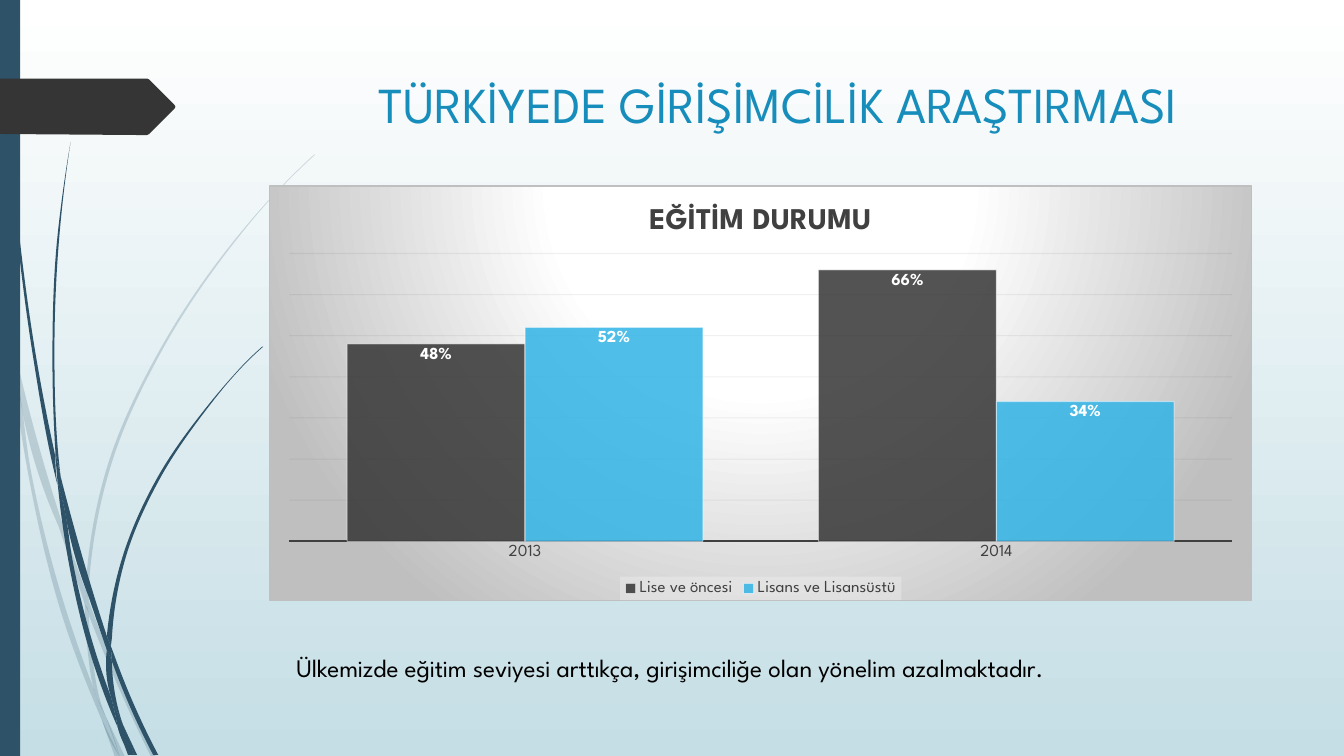
from lxml.etree import SubElement
from pptx import Presentation
from pptx.chart.data import CategoryChartData
from pptx.dml.color import RGBColor as RGB
from pptx.enum.chart import XL_CHART_TYPE as ChartType, XL_LABEL_POSITION as LabelPos
from pptx.enum.chart import XL_LEGEND_POSITION as LegendPos, XL_TICK_MARK as Tick
from pptx.enum.lang import MSO_LANGUAGE_ID as Lang
from pptx.enum.shapes import MSO_SHAPE as Shape
from pptx.enum.text import PP_ALIGN as Align
from pptx.oxml import parse_xml
from pptx.oxml.ns import nsdecls, qn
from pptx.util import Inches, Pt

FONT = "League Spartan"
WHITE = RGB(0xFF, 0xFF, 0xFF)
BLACK = RGB(0, 0, 0)
MIST = RGB(0xC5, 0xDE, 0xE5)
NAVY = RGB(0x2E, 0x53, 0x69)
CHARCOAL = RGB(0x35, 0x35, 0x35)
SKY = RGB(0x31, 0xB4, 0xE6)
TITLE_BLUE = RGB(0x17, 0x8D, 0xBB)
GREY_TEXT = RGB(0x40, 0x40, 0x40)
GRID = RGB(0x0D, 0x0D, 0x0D)

PALE_BLADES = [
    [[(.11, 3.5), (.09, 3.22), (0, 2.82)], [(0, 2.99)], [(.1, 3.44), (.11, 3.5)]],
    [[(.58, 5.22), (.84, 5.99)], [(.85, 5.86)], [(.62, 5.2), (.14, 3.45)],
     [(.17, 3.76), (.58, 5.22)]],
    [[(.92, 6.07), (.88, 5.96)], [(.88, 6.1)], [(1.23, 6.94), (1.5, 7.51)], [(1.55, 7.51)],
     [(1.27, 6.92), (.92, 6.07)]],
    [[(1.19, 7.51), (1.24, 7.51)], [(1.05, 7.11)], [(1.19, 7.51)]],
    [[(.93, 6.83), (.7, 6.19), (.31, 4.69), (.17, 3.76), (.11, 3.5)],
     [(.28, 4.7), (.65, 6.21), (.92, 6.93), (1.01, 7.14)], [(.99, 7.07), (.93, 6.83)]],
    [[(.84, 5.99), (.87, 6.46), (.93, 6.83), (.96, 6.92), (1.05, 7.11)],
     [(1.03, 7.06), (.91, 6.46), (.88, 6.1)], [(.88, 6.08), (.84, 5.99)]],
    [[(.88, 5.84), (1.1, 4.62), (1.6, 3.49), (2.29, 2.45), (2.68, 1.98), (2.9, 1.75),
      (3.12, 1.54)], [(3.12, 1.53)],
     [(2.89, 1.75), (2.68, 1.97), (2.28, 2.44), (1.58, 3.48), (1.07, 4.61), (.85, 5.84)],
     [(.85, 5.86)], [(.88, 5.96)], [(.88, 5.84)]],
    [[(1.01, 7.14), (1.14, 7.51)], [(1.19, 7.51)], [(1.01, 7.14)]],
    [[(.88, 6.08), (.88, 6.1)], [(.88, 5.96)], [(.85, 5.86)], [(.84, 5.99)], [(.88, 6.08)]],
    [[(.96, 6.92), (.93, 6.83)], [(.99, 7.07), (1.01, 7.14), (1.19, 7.51)],
     [(1.05, 7.11), (.96, 6.92)]],
]
DARK_BLADES = [
    [[(.07, 1.1), (.17, 2.33), (.33, 3.55), (.56, 4.77), (.57, 4.81)],
     [(.55, 4.57), (.55, 4.53)],
     [(.36, 3.55), (.19, 2.32), (.08, 1.09), (.05, .48), (.04, 0)], [(.03, 0)],
     [(.04, .48), (.07, 1.1)]],
    [[(.88, 5.92), (1.06, 6.45)], [(1.06, 6.31)], [(.93, 5.9), (.6, 4.72)],
     [(.64, 5.05), (.88, 5.92)]],
    [[(1.13, 6.49), (1.1, 6.41)], [(1.11, 6.56)], [(1.32, 7.08), (1.52, 7.49)], [(1.57, 7.49)],
     [(1.36, 7.06), (1.13, 6.49)]],
    [[(1.1, 6.91), (.98, 6.57), (.72, 5.56), (.64, 5.05), (.57, 4.77)],
     [(.68, 5.57), (.93, 6.59), (1.11, 7.08), (1.17, 7.22)], [(1.16, 7.17), (1.1, 6.91)]],
    [[(.6, 4.72), (.58, 4.53), (.54, 3.49), (.58, 2.45), (.63, 1.93), (.7, 1.41)],
     [(.62, 1.93), (.56, 2.45), (.52, 3.49), (.55, 4.49)], [(.6, 4.72)]],
    [[(1.33, 7.49), (1.36, 7.49)], [(1.22, 7.19)], [(1.33, 7.49)]],
    [[(.57, 4.77), (.64, 5.05)], [(.6, 4.72)], [(.55, 4.49)], [(.55, 4.53)], [(.57, 4.77)]],
    [[(1.11, 6.33), (1.25, 5.52), (1.58, 4.76), (2.05, 4.06), (2.31, 3.74), (2.45, 3.59),
      (2.61, 3.44)], [(2.6, 3.44)],
     [(2.45, 3.58), (2.31, 3.73), (2.04, 4.05), (1.56, 4.74), (1.22, 5.51), (1.06, 6.31)],
     [(1.1, 6.41)], [(1.11, 6.33)]],
    [[(1.17, 7.22), (1.27, 7.49)], [(1.31, 7.49)], [(1.17, 7.22)]],
    [[(1.06, 6.45), (1.1, 6.91), (1.16, 7.06), (1.22, 7.19)],
     [(1.21, 7.16), (1.11, 6.56)], [(1.09, 6.51), (1.06, 6.45)]],
    [[(1.06, 6.45), (1.09, 6.51), (1.11, 6.56)], [(1.1, 6.41)], [(1.06, 6.31)], [(1.06, 6.45)]],
    [[(1.16, 7.06), (1.1, 6.91)], [(1.16, 7.17), (1.17, 7.22), (1.3, 7.49)], [(1.33, 7.49)],
     [(1.22, 7.19), (1.16, 7.06)]],
]


def fade(element, percent):
    """Give every colour inside the element this opacity."""
    for color in element.iter(qn("a:srgbClr")):
        SubElement(color, qn("a:alpha")).set("val", str(percent * 1000))


def paint(sp, color):
    """Fill a shape flat, without line or shadow."""
    sp.fill.solid()
    sp.fill.fore_color.rgb = color
    sp.line.fill.background()
    sp.shadow.inherit = False


def style(font, size, color, bold=False):
    """Set the slide's typeface with a size and colour."""
    font.name, font.size, font.bold = FONT, Pt(size), bold
    font.color.rgb = color


def bends(points):
    """Return the two Bezier handles of each span of a smooth edge."""
    knots = [complex(*point) for point in points]
    spans = [b - a for a, b in zip(knots, knots[1:])]
    sizes = [abs(span) for span in spans]
    slopes = [span / size for span, size in zip(spans, sizes)]
    inner = [(s * e + t * d) / (d + e)
             for s, t, d, e in zip(slopes, slopes[1:], sizes, sizes[1:])]
    first = 2 * slopes[0] - inner[0] if inner else slopes[0]
    last = 2 * slopes[-1] - inner[-1] if inner else slopes[-1]
    turns = [first, *inner, last]
    return [(a + u * d / 3, b - v * d / 3)
            for a, b, u, v, d in zip(knots, knots[1:], turns, turns[1:], sizes)]


def add_outline(slide, points, color, x=0, y=0):
    """Draw a closed flat outline with its points offset by x and y."""
    points = [(Inches(x + px), Inches(y + py)) for px, py in points]
    builder = slide.shapes.build_freeform(*points[0])
    builder.add_line_segments(points[1:])
    sp = builder.convert_to_shape()
    paint(sp, color)
    return sp


def add_blades(slide, blades, opacity=100):
    """Draw grass blades whose edges are smooth and meet in corners."""
    for edges in blades:
        sp = add_outline(slide, sum(edges, []), NAVY)
        handles, corner = [], []
        for edge in edges:
            handles += bends(corner + edge)
            corner = edge[-1:]
        for line, pair in zip(list(sp.element.iter(qn("a:lnTo"))), handles):
            line.tag = qn("a:cubicBezTo")
            for i, handle in enumerate(pair):
                line.insert(i, line.makeelement(qn("a:pt"), {
                    "x": str(Inches(handle.real) - sp.left),
                    "y": str(Inches(handle.imag) - sp.top)}))
        if opacity < 100:
            fade(sp.element, opacity)


def add_side(slide, x, y, w, h):
    """Draw the left decoration: grass, edge bar and page tag."""
    add_blades(slide, PALE_BLADES, 20)
    add_blades(slide, DARK_BLADES)
    bar = slide.shapes.add_shape(Shape.RECTANGLE, Inches(x), Inches(y), Inches(w), Inches(h))
    paint(bar, NAVY)
    tag = [(0, 0), (1.46, 0), (1.48, .01), (1.73, .26), (1.74, .28), (1.73, .3),
           (1.48, .55), (1.46, .56), (1.36, .56), (0, .55)]
    add_outline(slide, tag, CHARCOAL, x, y + .78)


def add_text(slide, x, y, w, h, text, size, color, align=Align.LEFT):
    """Place one paragraph of Turkish text in the box."""
    tf = slide.shapes.add_textbox(Inches(x), Inches(y), Inches(w), Inches(h)).text_frame
    tf.word_wrap = True
    p = tf.paragraphs[0]
    p.alignment = align
    r = p.add_run()
    r.text = text
    style(r.font, size, color)
    r.font.language_id = Lang.TURKISH


def style_areas(chart):
    """Set the chart's backdrop, legend panel and plot position."""
    root = chart.element
    root.find(qn("c:chart")).addnext(parse_xml(
        f'<c:spPr {nsdecls("c", "a")}><a:gradFill><a:gsLst>'
        '<a:gs pos="0"><a:srgbClr val="FFFFFF"/></a:gs>'
        '<a:gs pos="39000"><a:srgbClr val="FFFFFF"/></a:gs>'
        '<a:gs pos="100000"><a:srgbClr val="BFBFBF"/></a:gs></a:gsLst>'
        '<a:path path="circle"><a:fillToRect l="50000" t="-80000" r="50000" b="180000"/></a:path>'
        '</a:gradFill><a:ln w="9525"><a:solidFill><a:srgbClr val="BFBFBF"/></a:solidFill></a:ln>'
        '</c:spPr>'))
    root.find(".//" + qn("c:legend")).find(qn("c:txPr")).addprevious(parse_xml(
        f'<c:spPr {nsdecls("c", "a")}><a:solidFill><a:srgbClr val="F2F2F2">'
        '<a:alpha val="39000"/></a:srgbClr></a:solidFill></c:spPr>'))
    area = root.find(".//" + qn("c:plotArea"))
    for layout in area.findall(qn("c:layout")):
        area.remove(layout)
    layout = parse_xml(f'<c:layout {nsdecls("c")}><c:manualLayout/></c:layout>')
    settings = dict(layoutTarget="inner", xMode="edge", yMode="edge", x=.02, y=.163, w=.96, h=.695)
    for name, value in settings.items():
        SubElement(layout[0], qn("c:" + name)).set("val", str(value))
    area.insert(0, layout)


def add_education_chart(slide, x, y, w, h):
    """Place the column chart of education levels in the box."""
    data = CategoryChartData(number_format="0%")
    data.categories = ["2013", "2014"]
    data.add_series("Lise ve öncesi", (.48, .66))
    data.add_series("Lisans ve Lisansüstü", (.52, .34))
    chart = slide.shapes.add_chart(ChartType.COLUMN_CLUSTERED, Inches(x), Inches(y),
                                   Inches(w), Inches(h), data).chart
    style(chart.font, 10, BLACK)
    r = chart.chart_title.text_frame.paragraphs[0].add_run()
    r.text = "EĞİTİM DURUMU"
    style(r.font, 21.6, GREY_TEXT, True)
    chart.has_legend = True
    chart.legend.position = LegendPos.BOTTOM
    chart.legend.include_in_layout = False
    style(chart.legend.font, 12, GREY_TEXT)

    years, shares = chart.category_axis, chart.value_axis
    years.major_tick_mark = years.minor_tick_mark = Tick.NONE
    style(years.tick_labels.font, 12, GREY_TEXT)
    years.tick_labels.offset = 0
    years.format.line.color.rgb = GREY_TEXT
    years.format.line.width = Pt(1.5)
    shares.minimum_scale, shares.maximum_scale, shares.major_unit = 0, .7, .1
    shares.visible = False
    grid = shares.major_gridlines.format.line
    grid.color.rgb, grid.width = GRID, Pt(.75)
    fade(chart.element.find(".//" + qn("c:majorGridlines")), 5)

    plot = chart.plots[0]
    plot.gap_width, plot.overlap, plot.vary_by_categories = 65, 0, False
    for series, color in zip(plot.series, (CHARCOAL, SKY)):
        series.format.fill.solid()
        series.format.fill.fore_color.rgb = color
        series.format.line.color.rgb = WHITE
        series.format.line.width = Pt(.75)
        labels = series.data_labels
        labels.show_value, labels.position = True, LabelPos.INSIDE_END
        labels.number_format, labels.number_format_is_linked = "0%", False
        style(labels.font, 12, WHITE, True)
    for series in chart.element.iter(qn("c:ser")):
        props = series.find(qn("c:spPr"))
        fade(props.find(qn("a:solidFill")), 85)
        fade(props.find(qn("a:ln")), 50)
    style_areas(chart)


def main():
    """Build and save the slide."""
    prs = Presentation()
    prs.slide_width, prs.slide_height = Inches(13.33), Inches(7.5)
    slide = prs.slides.add_slide(prs.slide_layouts[6])
    fill = slide.background.fill
    fill.gradient()
    fill.gradient_angle = 270
    for stop, position, color in zip(fill.gradient_stops, (0, 1), (WHITE, MIST)):
        stop.position, stop.color.rgb = position, color
    add_side(slide, 0, 0, .2, 7.5)
    add_text(slide, 2.84, .68, 9.75, 1.4, "TÜRKİYEDE GİRİŞİMCİLİK ARAŞTIRMASI", 36,
             TITLE_BLUE, Align.CENTER)
    add_education_chart(slide, 2.67, 1.84, 9.75, 4.12)
    add_text(slide, 2.84, 6.42, 9.41, .4, "Ülkemizde eğitim seviyesi arttıkça, "
             "girişimciliğe olan yönelim azalmaktadır.", 18, BLACK)
    prs.save("out.pptx")


if __name__ == "__main__":
    main()
